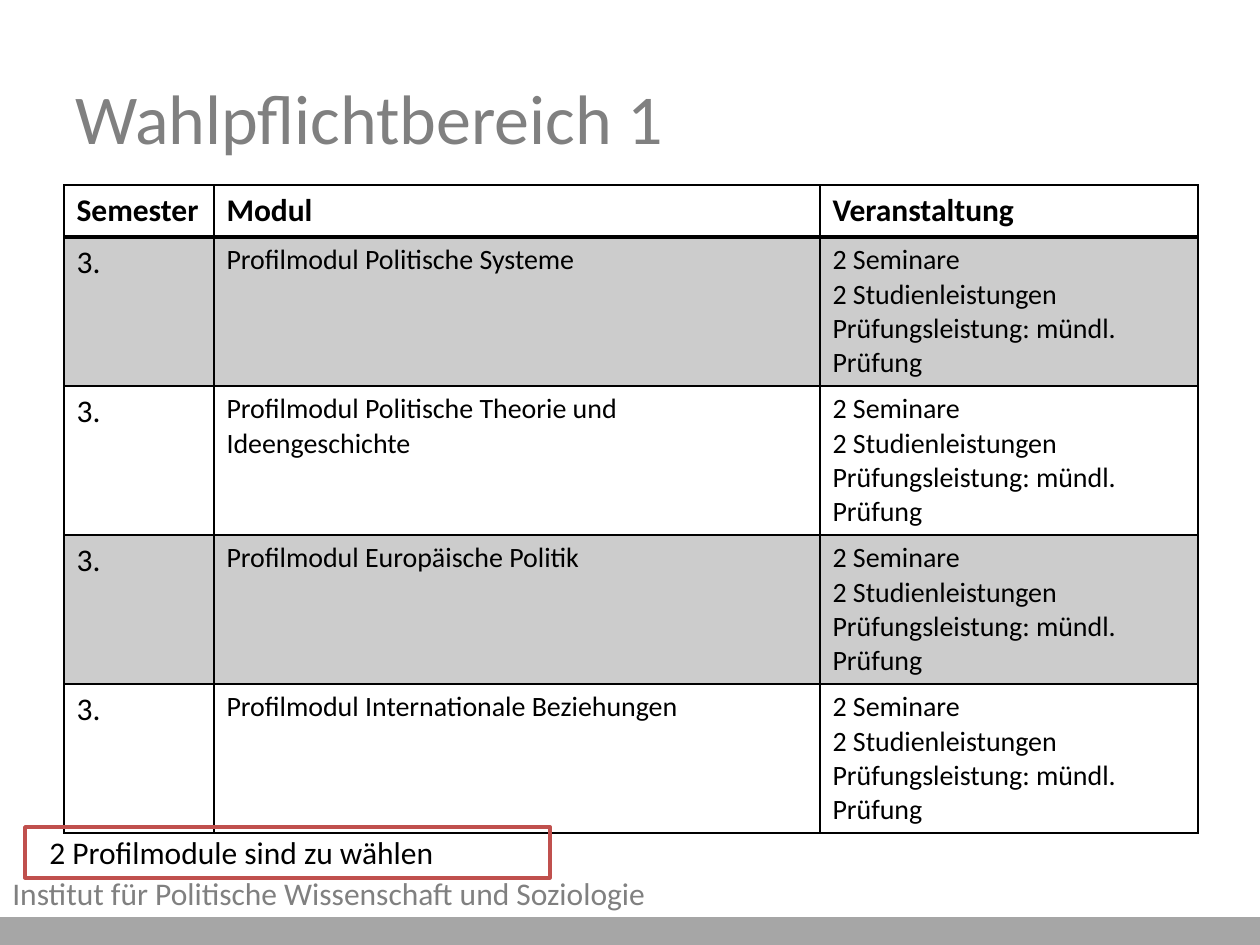
from dataclasses import dataclass
from typing import Optional

from lxml.etree import SubElement
from pptx import Presentation
from pptx.dml.color import RGBColor
from pptx.enum.shapes import MSO_SHAPE as Preset
from pptx.enum.text import MSO_ANCHOR as Anchor, PP_ALIGN as Align
from pptx.oxml.ns import qn
from pptx.util import Emu, Pt

PX_PER_INCH = 126
FONT = "Calibri"
BLACK = RGBColor(0x00, 0x00, 0x00)
GREY = RGBColor(0x80, 0x80, 0x80)
BAR_GREY = RGBColor(0xA6, 0xA6, 0xA6)
RED = RGBColor(0xC0, 0x50, 0x4D)
BAND_OPACITY = 20

HEADINGS = ("Semester", "Modul", "Veranstaltung")
COLUMN_WIDTHS = (150, 606, 378)
HEADING_HEIGHT = 52
MODULE_HEIGHT = 149
COURSES = ("2 Seminare", "2 Studienleistungen", "Prüfungsleistung: mündl. Prüfung")


@dataclass(frozen=True)
class Box:
    left: int
    top: int
    width: int
    height: int

    def emu(self) -> tuple:
        return tuple(px(n) for n in (self.left, self.top, self.width, self.height))


@dataclass(frozen=True)
class Module:
    semester: str
    name: str


MODULES = (
    Module("3.", "Profilmodul Politische Systeme"),
    Module("3.", "Profilmodul Politische Theorie und Ideengeschichte"),
    Module("3.", "Profilmodul Europäische Politik"),
    Module("3.", "Profilmodul Internationale Beziehungen"),
)


def px(length: int) -> Emu:
    return Emu(round(length * 914400 / PX_PER_INCH))


def write(frame, lines: tuple, size: int, color: RGBColor, bold: bool = False) -> None:
    frame.text = "\n".join(lines)
    for paragraph in frame.paragraphs:
        paragraph.alignment = Align.LEFT
        font = paragraph.font
        font.name, font.size, font.bold = FONT, Pt(size), bold
        font.color.rgb = color


def add_rectangle(slide, box: Box, fill: Optional[RGBColor], line: RGBColor) -> None:
    rectangle = slide.shapes.add_shape(Preset.RECTANGLE, *box.emu())
    rectangle.shadow.inherit = False
    if fill is None:
        rectangle.fill.background()
    else:
        rectangle.fill.solid()
        rectangle.fill.fore_color.rgb = fill
    rectangle.line.color.rgb = line
    rectangle.line.width = Pt(2)


def add_label(slide, box: Box, text: str, color: RGBColor) -> None:
    frame = slide.shapes.add_textbox(*box.emu()).text_frame
    frame.word_wrap = True
    write(frame, (text,), 18, color)


def set_borders(cell, top: int, bottom: int) -> None:
    properties = cell._tc.get_or_add_tcPr()
    for side, width in (("L", 1), ("R", 1), ("T", top), ("B", bottom)):
        border = SubElement(properties, qn(f"a:ln{side}"), w=str(Pt(width)))
        solid = SubElement(border, qn("a:solidFill"))
        SubElement(solid, qn("a:srgbClr"), val=str(BLACK))


def set_band(cell, shaded: bool) -> None:
    if not shaded:
        cell.fill.background()
        return
    cell.fill.solid()
    cell.fill.fore_color.rgb = BLACK
    color = cell._tc.tcPr.find(f"{qn('a:solidFill')}/{qn('a:srgbClr')}")
    SubElement(color, qn("a:alpha"), val=str(BAND_OPACITY * 1000))


def add_module_table(slide, left: int, top: int) -> None:
    heights = (HEADING_HEIGHT,) + (MODULE_HEIGHT,) * len(MODULES)
    box = Box(left, top, sum(COLUMN_WIDTHS), sum(heights))
    table = slide.shapes.add_table(len(heights), len(HEADINGS), *box.emu()).table
    table.first_row = table.horz_banding = False
    for column, width in zip(table.columns, COLUMN_WIDTHS):
        column.width = px(width)
    for row, height in zip(table.rows, heights):
        row.height = px(height)

    contents = [tuple((heading,) for heading in HEADINGS)]
    contents += [((module.semester,), (module.name,), COURSES) for module in MODULES]
    for r, row in enumerate(contents):
        for c, lines in enumerate(row):
            cell = table.cell(r, c)
            size = 18 if r == 0 or c == 0 else 16
            write(cell.text_frame, lines, size, BLACK, bold=r == 0)
            set_borders(cell, top=2 if r == 1 else 1, bottom=2 if r == 0 else 1)
            set_band(cell, shaded=r % 2 == 1)


def main() -> None:
    presentation = Presentation()
    presentation.slide_width, presentation.slide_height = px(1260), px(945)
    slide = presentation.slides.add_slide(presentation.slide_layouts[5])

    title = slide.shapes.title
    title.left, title.top, title.width, title.height = Box(63, 38, 1134, 157).emu()
    title.text_frame.vertical_anchor = Anchor.MIDDLE
    write(title.text_frame, ("Wahlpflichtbereich 1",), 40, GREY)

    add_rectangle(slide, Box(0, 919, 1260, 26), BAR_GREY, BAR_GREY)
    add_label(slide, Box(0, 868, 893, 50),
              "Institut für Politische Wissenschaft und Soziologie", GREY)
    add_module_table(slide, 64, 185)
    add_rectangle(slide, Box(25, 827, 525, 51), None, RED)
    add_label(slide, Box(37, 827, 515, 38), "2 Profilmodule sind zu wählen", BLACK)
    presentation.save("out.pptx")


if __name__ == "__main__":
    main()
